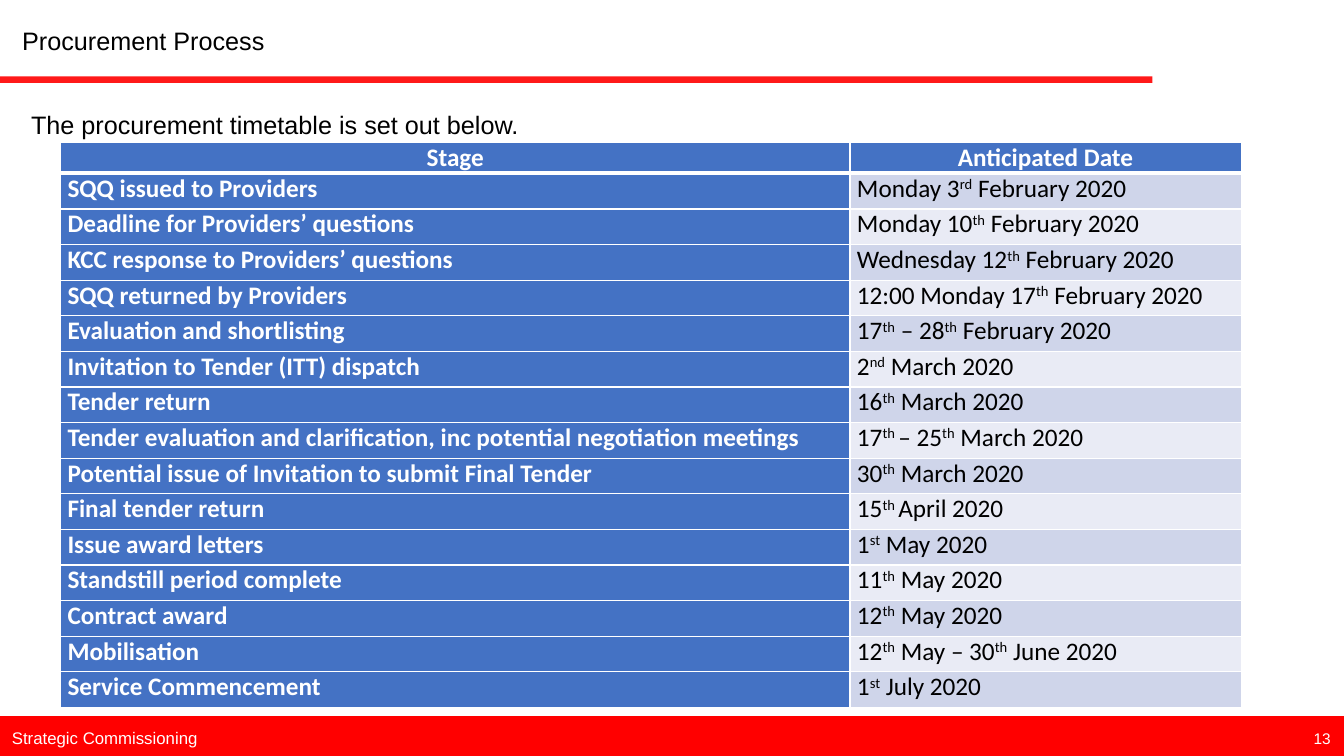
from dataclasses import dataclass

from lxml.etree import SubElement
from pptx import Presentation
from pptx.dml.color import RGBColor
from pptx.enum.shapes import MSO_CONNECTOR, MSO_SHAPE
from pptx.enum.text import MSO_ANCHOR, PP_ALIGN
from pptx.oxml import parse_xml
from pptx.oxml.ns import nsdecls, qn
from pptx.util import Inches, Pt


@dataclass(frozen=True)
class Theme:
    """Colours, fonts and type sizes of the slide."""
    red: str = "FF0000"
    white: str = "FFFFFF"
    black: str = "000000"
    blue: str = "4472C4"
    bands: tuple = ("CFD5EA", "E9EBF5")
    text_font: str = "Arial"
    table_font: str = "Calibri"
    body_size: int = 18
    footer_size: int = 12
    number_size: int = 11


THEME = Theme()
HEADINGS = ("Stage", "Anticipated Date")
TIMETABLE = (
    ("SQQ issued to Providers", "Monday 3^rd^ February 2020"),
    ("Deadline for Providers’ questions", "Monday 10^th^ February 2020"),
    ("KCC response to Providers’ questions", "Wednesday 12^th^ February 2020"),
    ("SQQ returned by Providers", "12:00 Monday 17^th^ February 2020"),
    ("Evaluation and shortlisting", "17^th^ – 28^th^ February 2020"),
    ("Invitation to Tender (ITT) dispatch", "2^nd^ March 2020"),
    ("Tender return", "16^th^ March 2020"),
    ("Tender evaluation and clarification, inc potential negotiation meetings",
     "17^th ^– 25^th^ March 2020"),
    ("Potential issue of Invitation to submit Final Tender", "30^th^ March 2020"),
    ("Final tender return", "15^th ^April 2020"),
    ("Issue award letters", "1^st^ May 2020"),
    ("Standstill period complete", "11^th^ May 2020"),
    ("Contract award", "12^th^ May 2020"),
    ("Mobilisation", "12^th^ May – 30^th^ June 2020"),
    ("Service Commencement", "1^st^ July 2020"),
)


def rgb(colour):
    """Turn a hex string into a colour."""
    return RGBColor.from_string(colour)


def format_font(font, name, size, colour, bold=False):
    """Set the look of a font."""
    font.name = name
    font.size = Pt(size)
    font.bold = bold
    font.color.rgb = rgb(colour)


def place(shape, left, top, width, height):
    """Move and size a shape, in inches."""
    shape.left, shape.top = Inches(left), Inches(top)
    shape.width, shape.height = Inches(width), Inches(height)


def write_text(shape, text, size, colour, anchor=MSO_ANCHOR.TOP):
    """Write one left-aligned paragraph into a shape."""
    frame = shape.text_frame
    frame.text = text
    frame.word_wrap = True
    frame.vertical_anchor = anchor
    paragraph = frame.paragraphs[0]
    paragraph.alignment = PP_ALIGN.LEFT
    paragraph.line_spacing = 1.0
    paragraph.space_before = Pt(0)
    format_font(paragraph.runs[0].font, THEME.text_font, size, colour)
    return paragraph


def add_text(slide, box, text, size, colour, anchor=MSO_ANCHOR.TOP):
    """Add a text box and return its paragraph."""
    shape = slide.shapes.add_textbox(*map(Inches, box))
    return write_text(shape, text, size, colour, anchor)


def add_footer_band(slide):
    """Add the red band along the bottom."""
    box = map(Inches, (0, 7.11, 13.33, 0.4))
    band = slide.shapes.add_shape(MSO_SHAPE.RECTANGLE, *box)
    band.shadow.inherit = False
    band.fill.solid()
    band.fill.fore_color.rgb = rgb(THEME.red)
    band.line.color.rgb = rgb(THEME.red)
    band.line.width = Pt(1)


def add_title_rule(slide):
    """Add the slightly transparent rule under the title."""
    ends = map(Inches, (0, 0.79, 11.43, 0.79))
    rule = slide.shapes.add_connector(MSO_CONNECTOR.STRAIGHT, *ends)
    rule.line.color.rgb = rgb(THEME.red)
    rule.line.width = Pt(4.5)
    properties = rule._element.spPr
    colour = next(properties.iter(qn("a:srgbClr")))
    SubElement(colour, qn("a:alpha")).set("val", "90000")
    SubElement(properties, qn("a:effectLst"))


def set_borders(cell, bottom_width):
    """Draw white borders round a cell."""
    properties = cell._tc.get_or_add_tcPr()
    for index, side in enumerate("LRTB"):
        width = Pt(bottom_width if side == "B" else 1)
        properties.insert(index, parse_xml(
            f'<a:ln{side} {nsdecls("a")} w="{width}"><a:solidFill>'
            f'<a:srgbClr val="{THEME.white}"/></a:solidFill></a:ln{side}>'))


def fill_cell(cell, text, fill, colour, bold, alignment, bottom_width):
    """Write a cell, raising the parts between carets."""
    cell.fill.solid()
    cell.fill.fore_color.rgb = rgb(fill)
    cell.margin_left = cell.margin_right = Inches(0.07)
    cell.margin_top = cell.margin_bottom = 0
    paragraph = cell.text_frame.paragraphs[0]
    paragraph.alignment = alignment
    for index, part in enumerate(text.split("^")):
        run = paragraph.add_run()
        run.text = part
        format_font(run.font, THEME.table_font, THEME.body_size, colour, bold)
        if index % 2:
            run._r.get_or_add_rPr().set("baseline", "30000")
    set_borders(cell, bottom_width)


def add_timetable(slide):
    """Add the table of stages and dates."""
    height, header_height = 5.61, 0.31
    box = map(Inches, (0.6, 1.41, 11.71, height))
    table = slide.shapes.add_table(len(TIMETABLE) + 1, 2, *box).table
    table.first_col = True
    for column, width in zip(table.columns, (7.83, 3.88)):
        column.width = Inches(width)
    for row in table.rows:
        row.height = Inches((height - header_height) / len(TIMETABLE))
    table.rows[0].height = Inches(header_height)
    for column, heading in enumerate(HEADINGS):
        fill_cell(table.cell(0, column), heading, THEME.blue, THEME.white,
                  True, PP_ALIGN.CENTER, 3)
    for row, (stage, date) in enumerate(TIMETABLE, 1):
        fill_cell(table.cell(row, 0), stage, THEME.blue, THEME.white,
                  True, PP_ALIGN.LEFT, 1)
        fill_cell(table.cell(row, 1), date, THEME.bands[(row - 1) % 2],
                  THEME.black, False, PP_ALIGN.LEFT, 1)


def main():
    """Build and save the slide."""
    presentation = Presentation()
    presentation.slide_width = Inches(13.33)
    presentation.slide_height = Inches(7.5)
    slide = presentation.slides.add_slide(presentation.slide_layouts[5])
    add_footer_band(slide)
    add_title_rule(slide)
    add_text(slide, (0.02, 7.12, 2.33, 0.4), "Strategic Commissioning",
             THEME.footer_size, THEME.white, MSO_ANCHOR.MIDDLE)
    intro = add_text(slide, (0.21, 0.99, 11.22, 0.42),
                     "The procurement timetable is set out below.",
                     THEME.body_size, THEME.black)
    intro.line_spacing = 1.15
    intro.space_after = Pt(10)
    title = slide.shapes.title
    place(title, 0.12, 0.2, 7.44, 0.4)
    write_text(title, "Procurement Process", THEME.body_size, THEME.black)
    add_text(slide, (12.93, 7.18, 0.41, 0.29), "13",
             THEME.number_size, THEME.white)
    add_timetable(slide)
    presentation.save("out.pptx")


if __name__ == "__main__":
    main()
